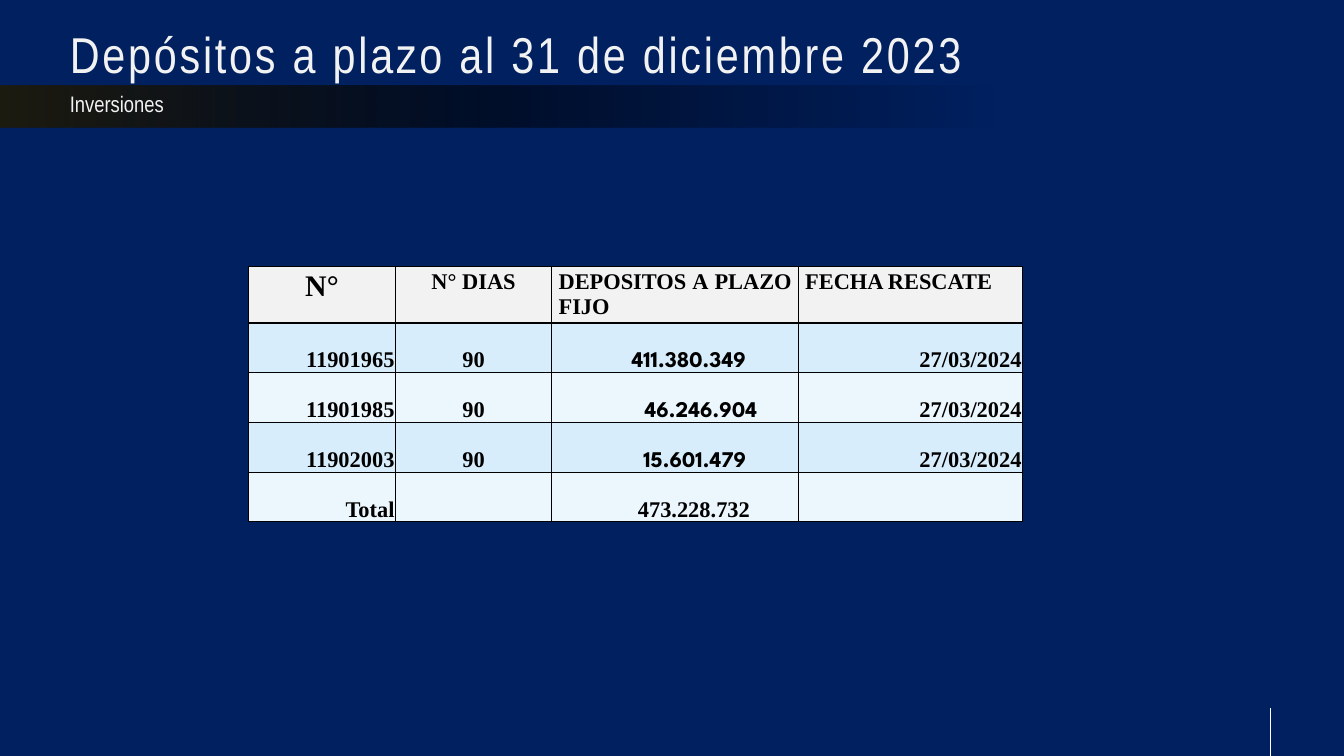
from lxml.etree import SubElement
from pptx import Presentation
from pptx.dml.color import RGBColor
from pptx.enum.shapes import MSO_CONNECTOR, MSO_SHAPE
from pptx.enum.text import MSO_ANCHOR, MSO_AUTO_SIZE, PP_ALIGN
from pptx.oxml import parse_xml
from pptx.oxml.ns import nsdecls, qn
from pptx.util import Cm, Pt

NAVY = RGBColor(0x00, 0x20, 0x60)
WHITE = RGBColor(0xFF, 0xFF, 0xFF)
PALE = RGBColor(0xF2, 0xF2, 0xF2)
BLACK = RGBColor(0x00, 0x00, 0x00)
SKY = RGBColor(0xD7, 0xED, 0xFB)
ICE = RGBColor(0xEC, 0xF6, 0xFD)

SERIF = "Times New Roman"
ROUND = "League Spartan"


def style(para, size, name, color, bold=False):
    for run in para.runs:
        run.font.size = Pt(size)
        run.font.name = name
        run.font.color.rgb = color
        run.font.bold = bold


def border(cell, base):
    """Draw black cell edges; base is the width of the bottom one."""
    props = cell._tc.get_or_add_tcPr()
    edges = [("lnL", 1), ("lnR", 1), ("lnT", 1), ("lnB", base)]
    for spot, (tag, width) in enumerate(edges):
        edge = parse_xml(
            f'<a:{tag} {nsdecls("a")} w="{Pt(width)}"><a:solidFill>'
            f'<a:srgbClr val="{BLACK}"/></a:solidFill></a:{tag}>')
        props.insert(spot, edge)


deck = Presentation()
deck.slide_width = Cm(50.8)
deck.slide_height = Cm(28.58)
slide = deck.slides.add_slide(deck.slide_layouts[1])
slide.background.fill.solid()
slide.background.fill.fore_color.rgb = NAVY

# Title and subtitle
title, body = slide.placeholders
heads = [
    (title, "Depósitos a plazo al 31 de diciembre 2023", 54,
     (2.18, -0.05, 45.72, 3.43), MSO_ANCHOR.BOTTOM),
    (body, "Inversiones", 24, (2.18, 3.28, 45.21, 1.6), MSO_ANCHOR.TOP),
]
for shape, text, size, place, anchor in heads:
    shape.left, shape.top, shape.width, shape.height = map(Cm, place)
    frame = shape.text_frame
    frame.text = text
    frame.word_wrap = True
    frame.auto_size = MSO_AUTO_SIZE.NONE
    frame.vertical_anchor = anchor
    frame.margin_left = frame.margin_right = Cm(0.46)
    frame.margin_top = frame.margin_bottom = Cm(0.23)
    para = frame.paragraphs[0]
    para.alignment = PP_ALIGN.LEFT
    para.space_before = Pt(0)
    style(para, size, "Arial Narrow", PALE)

title.text_frame.paragraphs[0].runs[0].font._element.set("spc", "300")
para = body.text_frame.paragraphs[0]
para.line_spacing = 0.9
para.space_after = Pt(6)
props = para._p.get_or_add_pPr()
props.set("marL", "0")
props.set("indent", "0")
SubElement(props, qn("a:buNone"))

# Fading bar behind the subtitle
bar = slide.shapes.add_shape(
    MSO_SHAPE.RECTANGLE, 0, Cm(3.23), deck.slide_width, Cm(1.6))
bar.shadow.inherit = False
bar.line.fill.background()
bar.fill.gradient()
bar.fill.gradient_angle = 0
stops = bar._element.spPr.find(qn("a:gradFill")).find(qn("a:gsLst"))
for stop in list(stops):
    stops.remove(stop)
for spot, color, alpha in [(0, "1E1C11", 100), (39, "000000", 54),
                           (74, "000000", 0)]:
    stops.append(parse_xml(
        f'<a:gs {nsdecls("a")} pos="{spot * 1000}"><a:srgbClr val="{color}">'
        f'<a:alpha val="{alpha * 1000}"/></a:srgbClr></a:gs>'))
slide.shapes._spTree.insert(2, bar._element)

# Corner line
line = slide.shapes.add_connector(
    MSO_CONNECTOR.STRAIGHT, Cm(48), Cm(26.77), Cm(48), deck.slide_height)
line.line.color.rgb = WHITE
line.line.width = Pt(0.75)
SubElement(line._element.spPr, qn("a:effectLst"))

# Deposits table
rows = [
    ("N°", "N° DIAS", "DEPOSITOS A PLAZO FIJO", "FECHA RESCATE"),
    ("11901965", "90", "411.380.349", "27/03/2024"),
    ("11901985", "90", "46.246.904", "27/03/2024"),
    ("11902003", "90", "15.601.479", "27/03/2024"),
    ("Total", "", "473.228.732", ""),
]
widths = [5.54, 5.92, 9.32, 8.46]
shifts = [0, 1.06, 1.97, 1.51, 1.44]  # left inset of each amount
top = [PP_ALIGN.CENTER, PP_ALIGN.CENTER, PP_ALIGN.JUSTIFY, PP_ALIGN.JUSTIFY]
rest = [PP_ALIGN.RIGHT, PP_ALIGN.CENTER, PP_ALIGN.CENTER, PP_ALIGN.RIGHT]

table = slide.shapes.add_table(
    len(rows), len(widths), Cm(9.4), Cm(10.08), Cm(sum(widths)), Cm(9.5)).table
for col, width in zip(table.columns, widths):
    col.width = Cm(width)

for r, row in enumerate(rows):
    head = r == 0
    table.rows[r].height = Cm(1.98 if head else 1.88)
    for c, text in enumerate(row):
        cell = table.cell(r, c)
        cell.fill.solid()
        cell.fill.fore_color.rgb = PALE if head else SKY if r % 2 else ICE
        border(cell, 3 if head else 1)
        if not head:
            cell.vertical_anchor = MSO_ANCHOR.BOTTOM
            cell.margin_left = Cm(shifts[r] if c == 2 else 0.03)
            cell.margin_right = cell.margin_top = Cm(0.03)
            cell.margin_bottom = 0
        cell.text_frame.text = text
        para = cell.text_frame.paragraphs[0]
        para.alignment = (top if head else rest)[c]
        amount = c == 2 and 0 < r < len(rows) - 1
        style(para, 32 if head and c == 0 else 24,
              ROUND if amount else SERIF, BLACK, True)

deck.save("out.pptx")
